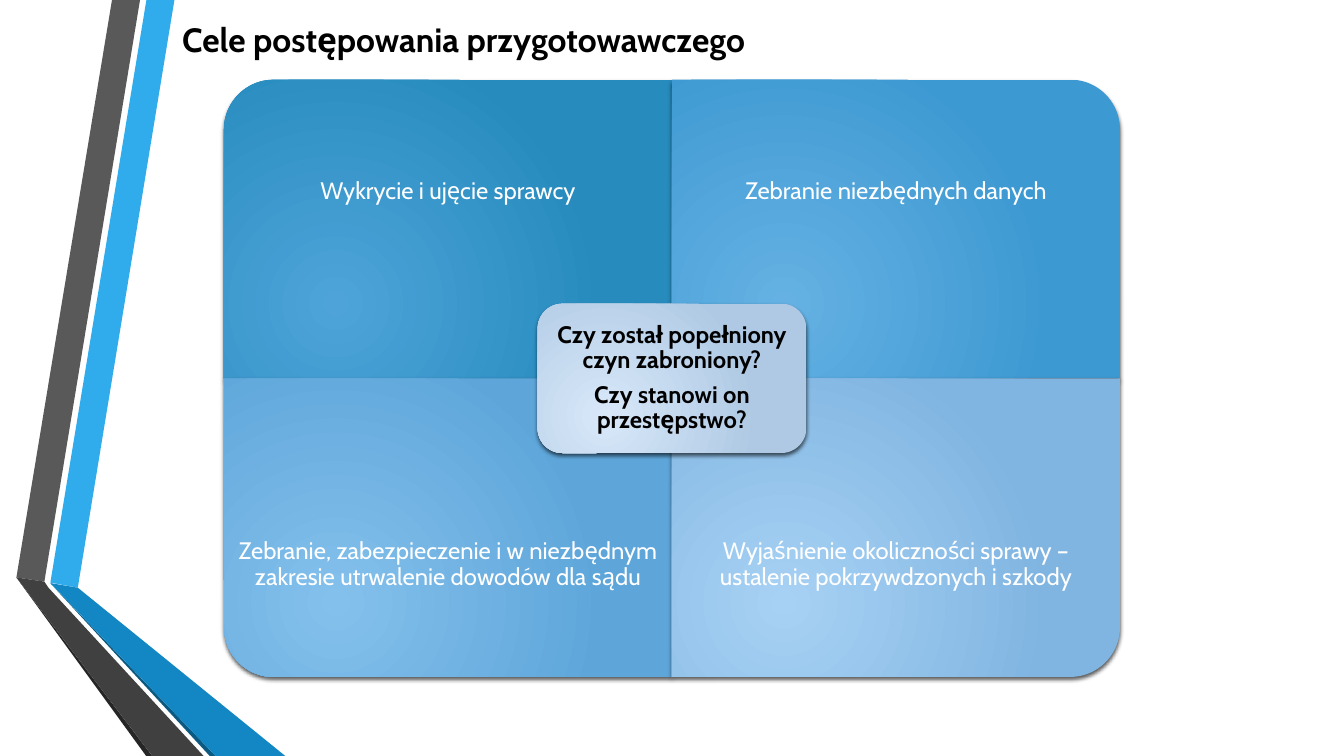
from pptx import Presentation
from pptx.util import Pt
from pptx.dml.color import RGBColor
from pptx.enum.shapes import MSO_SHAPE
from pptx.enum.text import MSO_ANCHOR, MSO_AUTO_SIZE, PP_ALIGN
from pptx.oxml import parse_xml
from pptx.oxml.ns import nsdecls

HUES = {
    "sky": "30ACEC", "gray": "595959", "coal": "262626",
    "navy": "0C5A82", "blue": "1287C3", "dark": "404040",
    "white": "FFFFFF", "black": "000000",
}
FONT = "Cabin"
TITLE = "Cele postępowania przygotowawczego"
BANDS = [
    ("sky", [(36, 416.2), (55.6, 419.8), (124.6, 0), (104.6, 0)]),
    ("gray", [(100, 0), (80, 0), (11.7, 412.5), (31.7, 415.5)]),
    ("coal", [(11.7, 412.5), (104.4, 540), (108.7, 540)]),
    ("navy", [(36, 416.7), (149.8, 540), (154, 540)]),
    ("blue", [(36, 416.5), (154, 540), (203.8, 540), (55.6, 419.8)]),
    ("dark", [(145.4, 540), (34.6, 419.8), (31.7, 415.5),
              (11.7, 412.5), (108.7, 540)]),
]
GOALS = [
    ("Wykrycie i ujęcie sprawcy", 270, "4EA4D9", "278BBE"),
    ("Zebranie niezbędnych danych", 0, "65B1E3", "3D99D2"),
    ("Zebranie, zabezpieczenie i w niezbędnym zakresie utrwalenie dowodów dla sądu",
     180, "84C0EC", "5EA6DA"),
    ("Wyjaśnienie okoliczności sprawy – ustalenie pokrzywdzonych i szkody",
     90, "A7D1F4", "80B5E1"),
]
CORE = ["Czy został popełniony czyn zabroniony?", "Czy stanowi on przestępstwo?"]
CORE_HUES = ("D8E8F9", "AFC9E4")

LEFT, TOP, WIDE, HIGH = 160, 56.9, 320, 213.33
GRAD = """<a:gradFill %s rotWithShape="1"><a:gsLst>
<a:gs pos="0"><a:srgbClr val="%s"/></a:gs>
<a:gs pos="100000"><a:srgbClr val="%s"/></a:gs></a:gsLst>
<a:path path="circle"><a:fillToRect l="50000" t="100000" r="100000" b="50000"/></a:path>
</a:gradFill>"""
SHADE = """<a:outerShdw %s blurRad="38100" dist="25400" dir="5400000" rotWithShape="0">
<a:srgbClr val="000000"><a:alpha val="64000"/></a:srgbClr></a:outerShdw>"""

deck = Presentation()
deck.slide_width, deck.slide_height = Pt(960), Pt(540)
slide = deck.slides.add_slide(deck.slide_layouts[6])
shapes = slide.shapes


def add_band(hue, spots):
    spots = [(Pt(x), Pt(y)) for x, y in spots]
    pen = shapes.build_freeform(*spots[0])
    pen.add_line_segments(spots[1:], close=True)
    band = pen.convert_to_shape()
    band.shadow.inherit = False
    band.fill.solid()
    band.fill.fore_color.rgb = RGBColor.from_string(HUES[hue])
    band.line.fill.background()


def add_tile(kind, x, y, w, h, inner, outer, turn=0):
    if turn % 180:
        x, y, w, h = x + (w - h) / 2, y + (h - w) / 2, h, w
    tile = shapes.add_shape(kind, Pt(x), Pt(y), Pt(w), Pt(h))
    tile.rotation = turn
    tile.line.fill.background()
    tile.shadow.inherit = False
    props = tile.element.spPr
    line, effects = props[-2:]
    line.addprevious(parse_xml(GRAD % (nsdecls("a"), inner, outer)))
    effects.append(parse_xml(SHADE % nsdecls("a")))
    return tile


def set_text(frame, lines, inset, hue, bold=False):
    frame.word_wrap = True
    frame.vertical_anchor = MSO_ANCHOR.MIDDLE
    frame.margin_left = frame.margin_right = Pt(inset)
    frame.margin_top = frame.margin_bottom = Pt(inset)
    for i, line in enumerate(lines):
        para = frame.add_paragraph() if i else frame.paragraphs[0]
        para.text = line
        para.alignment = PP_ALIGN.CENTER
        para.line_spacing = 0.9
        para.space_after = Pt(6)
        set_font(para, 17, hue, bold)


def set_font(para, size, hue, bold):
    para.font.name = FONT
    para.font.size = Pt(size)
    para.font.bold = bold
    para.font.color.rgb = RGBColor.from_string(HUES[hue])


for hue, spots in BANDS:
    add_band(hue, spots)

for i, (goal, turn, inner, outer) in enumerate(GOALS):
    row, col = divmod(i, 2)
    x, y = LEFT + col * WIDE, TOP + row * HIGH
    add_tile(MSO_SHAPE.ROUND_1_RECTANGLE, x, y, WIDE, HIGH, inner, outer, turn)
    box = shapes.add_textbox(Pt(x), Pt(y + row * HIGH / 4), Pt(WIDE), Pt(HIGH * 3 / 4))
    set_text(box.text_frame, [goal], 9.5, "white")

wide, high = WIDE * 0.6, HIGH / 2
core = add_tile(MSO_SHAPE.ROUNDED_RECTANGLE, LEFT + WIDE - wide / 2,
                TOP + HIGH - high / 2, wide, high, *CORE_HUES)
set_text(core.text_frame, CORE, 5, "black", True)

head = shapes.add_textbox(Pt(123.1), Pt(10.1), Pt(463), Pt(36))
head.text_frame.word_wrap = True
head.text_frame.auto_size = MSO_AUTO_SIZE.SHAPE_TO_FIT_TEXT
para = head.text_frame.paragraphs[0]
para.text = TITLE
set_font(para, 24, "black", True)

deck.save("out.pptx")
